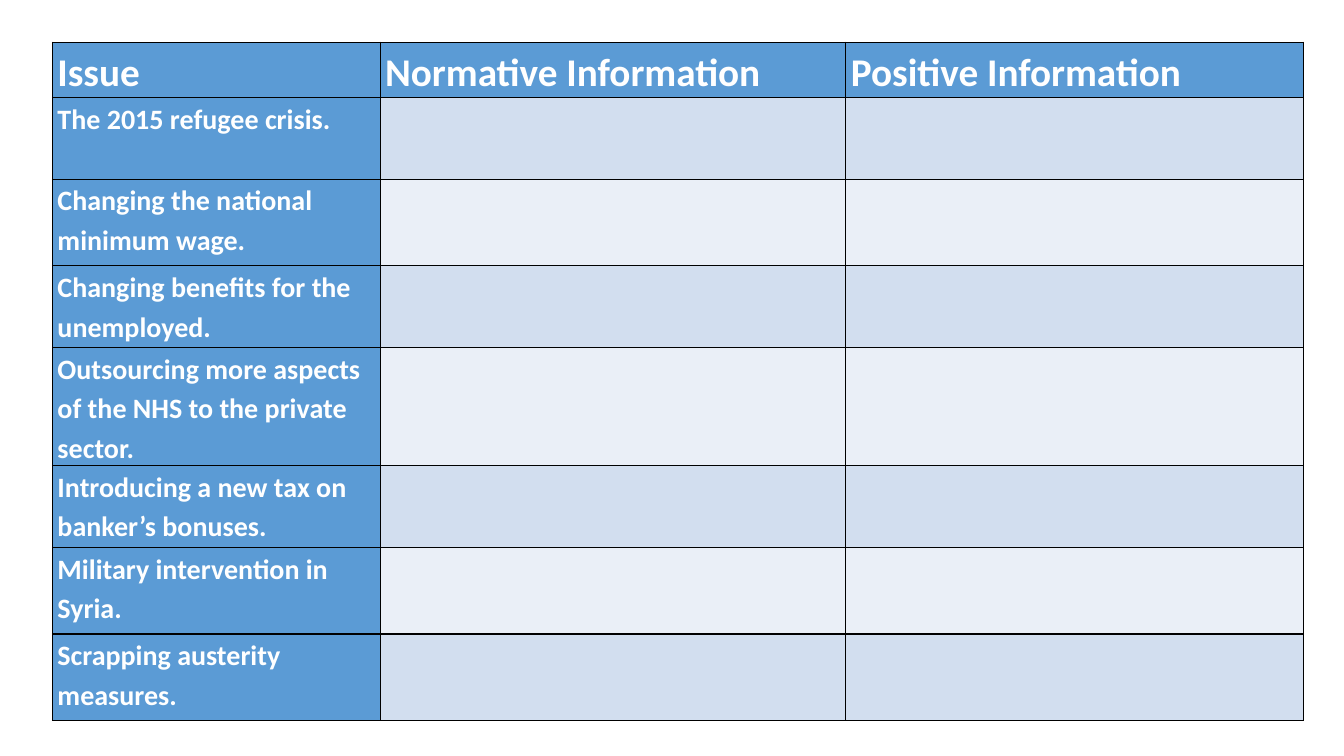
from dataclasses import dataclass

from lxml.etree import SubElement
from pptx import Presentation
from pptx.dml.color import RGBColor
from pptx.oxml.ns import qn
from pptx.util import Pt

PX = 9144  # EMU per px, 100 px to the inch


@dataclass(frozen=True)
class Theme:
    font: str = "Calibri"
    header_size: int = 28
    issue_size: int = 20
    text: str = "FFFFFF"
    accent: str = "5B9BD5"
    bands: tuple = ("D2DEEF", "EAEFF7")
    border: str = "000000"
    border_width: int = 1


theme = Theme()

headers = ["Issue", "Normative Information", "Positive Information"]
issues = [
    "The 2015 refugee crisis.",
    "Changing the national minimum wage.",
    "Changing benefits for the unemployed.",
    "Outsourcing more aspects of the NHS to the private sector.",
    "Introducing a new tax on banker’s bonuses.",
    "Military intervention in Syria.",
    "Scrapping austerity measures.",
]
column_widths = [325, 462, 454]
row_heights = [48, 81, 86, 81, 86, 81, 86, 86]


def add_borders(cell):
    """Outline all four sides; the lines must come before the fill in the XML."""
    properties = cell._tc.get_or_add_tcPr()
    for position, side in enumerate(("lnL", "lnR", "lnT", "lnB")):
        line = SubElement(properties, qn(f"a:{side}"), w=str(Pt(theme.border_width)))
        fill = SubElement(line, qn("a:solidFill"))
        SubElement(fill, qn("a:srgbClr"), val=theme.border)
        properties.insert(position, line)


def write_label(cell, text, size):
    cell.margin_left = cell.margin_right = 5 * PX
    cell.margin_top = cell.margin_bottom = 0
    cell.text = text
    paragraph = cell.text_frame.paragraphs[0]
    paragraph.line_spacing = 1.15
    paragraph.font.name = theme.font
    paragraph.font.size = Pt(size)
    paragraph.font.bold = True
    paragraph.font.color.rgb = RGBColor.from_string(theme.text)


presentation = Presentation()
presentation.slide_width = 1333 * PX
presentation.slide_height = 750 * PX
slide = presentation.slides.add_slide(presentation.slide_layouts[6])

table = slide.shapes.add_table(
    len(row_heights), len(column_widths),
    52 * PX, 42 * PX, sum(column_widths) * PX, sum(row_heights) * PX,
).table
for column, width in zip(table.columns, column_widths):
    column.width = width * PX
for row, height in zip(table.rows, row_heights):
    row.height = height * PX

for row_index, row in enumerate(table.rows):
    for column_index, cell in enumerate(row.cells):
        is_label = row_index == 0 or column_index == 0
        color = theme.accent if is_label else theme.bands[(row_index - 1) % 2]
        cell.fill.solid()
        cell.fill.fore_color.rgb = RGBColor.from_string(color)
        add_borders(cell)

for column_index, header in enumerate(headers):
    write_label(table.cell(0, column_index), header, theme.header_size)
for row_index, issue in enumerate(issues, start=1):
    write_label(table.cell(row_index, 0), issue, theme.issue_size)

presentation.save("out.pptx")
